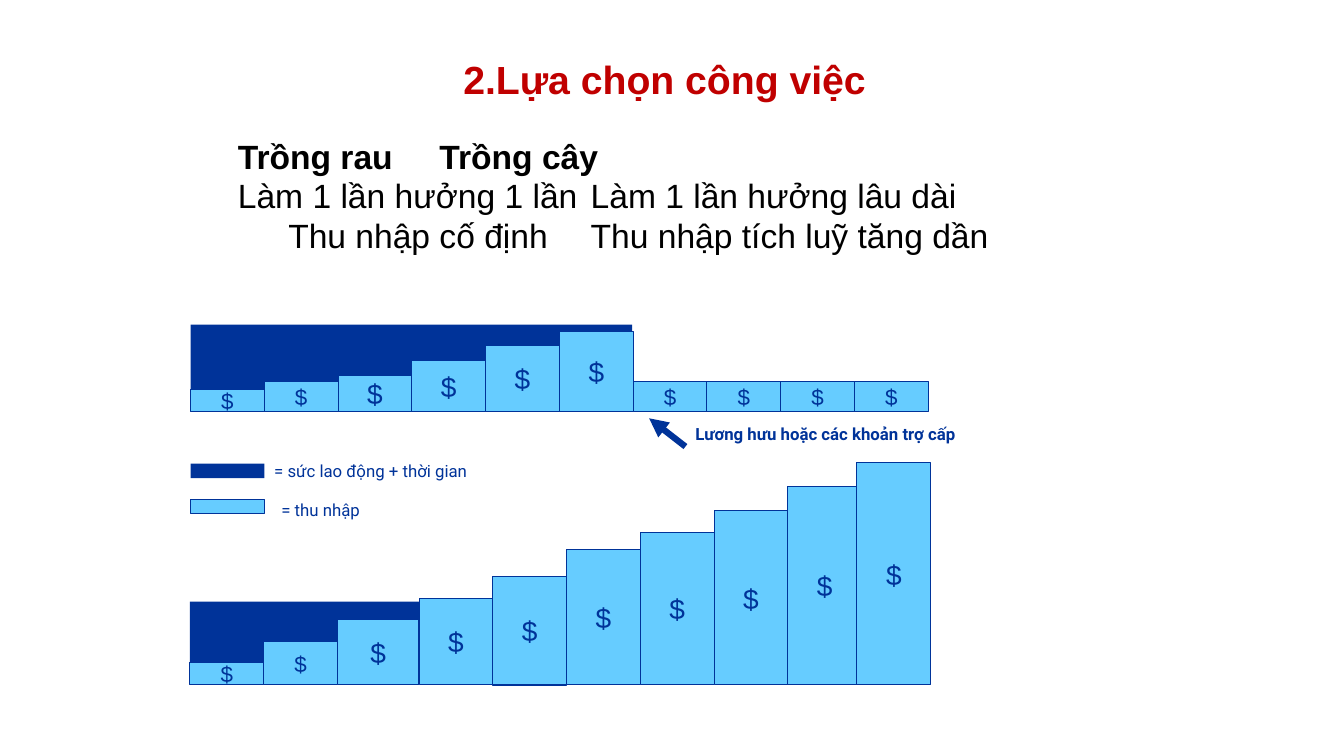
from pptx import Presentation
from pptx import util as u
from pptx.dml.color import RGBColor
from pptx.enum import shapes, text
from pptx.oxml.ns import qn
from lxml import etree

Pt = u.Pt
NAVY = RGBColor(0x00, 0x33, 0x99)
SKY = RGBColor(0x66, 0xCC, 0xFF)
RED = RGBColor(0xC0, 0x00, 0x00)
BLACK = RGBColor(0x00, 0x00, 0x00)
BAR_W = 52.7
LINE_W = 0.75


def add_run(p, words, size, color, font="Arial", bold=False):
    r = p.add_run()
    r.text = words
    f = r.font
    f.size, f.name, f.bold = Pt(size), font, bold
    f.color.rgb = color


def place(sp, x, y, w, h):
    sp.left, sp.top, sp.width, sp.height = Pt(x), Pt(y), Pt(w), Pt(h)


def rect(s, x, y, w, h, fill, outlined=False):
    sp = s.shapes.add_shape(shapes.MSO_SHAPE.RECTANGLE, Pt(x), Pt(y), Pt(w), Pt(h))
    sp.shadow.inherit = False
    sp.fill.solid()
    sp.fill.fore_color.rgb = fill
    if outlined:
        sp.line.color.rgb = NAVY
        sp.line.width = Pt(LINE_W)
    else:
        sp.line.fill.background()
    return sp


def line(s, x1, y1, x2, y2, width, arrow=False):
    c = s.shapes.add_connector(shapes.MSO_CONNECTOR.STRAIGHT, Pt(x1), Pt(y1), Pt(x2), Pt(y2))
    c.line.color.rgb = NAVY
    c.line.width = Pt(width)
    if arrow:
        etree.SubElement(c.line._get_or_add_ln(), qn("a:tailEnd"), type="triangle")
    etree.SubElement(c._element.spPr, qn("a:effectLst"))


def label(s, x, y, w, words, bold=False):
    tf = s.shapes.add_textbox(Pt(x), Pt(y), Pt(w), Pt(21.6)).text_frame
    tf.word_wrap = True
    tf.vertical_anchor = text.MSO_ANCHOR.MIDDLE
    add_run(tf.paragraphs[0], words, 12, NAVY, "Roboto", bold)


def heading(s, x, y, w, h):
    sp = s.shapes.title
    place(sp, x, y, w, h)
    tf = sp.text_frame
    tf.auto_size = text.MSO_AUTO_SIZE.NONE
    tf.vertical_anchor = text.MSO_ANCHOR.TOP
    p = tf.paragraphs[0]
    p.alignment = text.PP_ALIGN.CENTER
    p.line_spacing = 1.0
    add_run(p, "2.Lựa chọn công việc", 28, RED, bold=True)


def comparison(s, x, y, w, h):
    # Each row: words split by tabs, the tab stops, bold
    rows = [
        ("Trồng rau\tTrồng cây", [315], True),
        ("Làm 1 lần hưởng 1 lần\tLàm 1 lần hưởng lâu dài", [308.6], False),
        ("\tThu nhập cố định\tThu nhập tích luỹ tăng dần", [19.4, 255.7], False),
    ]
    sp = s.placeholders[1]
    place(sp, x, y, w, h)
    tf = sp.text_frame
    tf.auto_size = text.MSO_AUTO_SIZE.NONE
    tf.margin_top = tf.margin_bottom = 0
    for i, (words, stops, bold) in enumerate(rows):
        p = tf.paragraphs[0] if i == 0 else tf.add_paragraph()
        p.line_spacing = Pt(h / len(rows))
        p.space_before = Pt(0)
        pPr = p._p.get_or_add_pPr()
        pPr.set("marL", "0")
        pPr.set("indent", "0")
        etree.SubElement(pPr, qn("a:buNone"))
        tabs = etree.SubElement(pPr, qn("a:tabLst"))
        for stop in stops:
            etree.SubElement(tabs, qn("a:tab"), pos=str(int(Pt(stop))), algn="l")
        add_run(p, words, 24, BLACK, bold=bold)


def income_steps(s, x, base, effort_w, effort_h, bars, axis_w=0):
    # Labour block and axis behind the income bars
    rect(s, x, base - effort_h, effort_w, effort_h, NAVY)
    if axis_w:
        line(s, x, base, x + axis_w, base, LINE_W)
    # Bars: height, size of the sign, advance to the next bar
    for height, size, advance in bars:
        w = max(advance, BAR_W)
        tf = rect(s, x, base - height, w, height, SKY, True).text_frame
        tf.word_wrap = False
        tf.vertical_anchor = text.MSO_ANCHOR.MIDDLE
        p = tf.paragraphs[0]
        p.alignment = text.PP_ALIGN.CENTER
        add_run(p, "$", size, NAVY)
        x += advance


def pension_note(s, x, y):
    line(s, x, y + 20.2, x - 25.9, y, 4.5, arrow=True)
    label(s, x, y, 244, "Lương hưu hoặc các khoản trợ cấp", bold=True)


def legend(s, x, y):
    rect(s, x, y, BAR_W, 10.3, NAVY)
    label(s, x + BAR_W, y - 5.8, 163, "= sức lao động + thời gian")
    rect(s, x, y + 25.3, BAR_W, 10.3, SKY, True)
    label(s, x + 57.8, y + 22.3, 126, "= thu nhập")


def main():
    prs = Presentation()
    prs.slide_width, prs.slide_height = Pt(960), Pt(540)
    s = prs.slides.add_slide(prs.slide_layouts[1])

    # Title and the two kinds of work
    heading(s, 162.7, 36, 624, 42)
    comparison(s, 162.7, 98, 624, 84)

    # Fixed income, then pension
    heights = [15.8, 21, 25.7, 36, 47, 57, 21, 21, 21, 21]
    fixed = [(h, 16 if h <= 21 else 20, BAR_W) for h in heights]
    income_steps(s, 136.1, 293.8, 315.4, 62, fixed, axis_w=525.6)
    pension_note(s, 489.6, 298.8)

    # Growing income
    heights = [15.8, 31, 46.8, 62, 77.8, 96.5, 108.9, 124.5, 141.8, 158.6]
    advances = [BAR_W] * 2 + [58.3] + [BAR_W] * 5 + [49.3, BAR_W]
    growing = [(h, 16 if h <= 31 else 20, a) for h, a in zip(heights, advances)]
    income_steps(s, 135.6, 489.3, 525.6, 59.5, growing)

    legend(s, 136.1, 331.2)
    prs.save("out.pptx")


if __name__ == "__main__":
    main()
